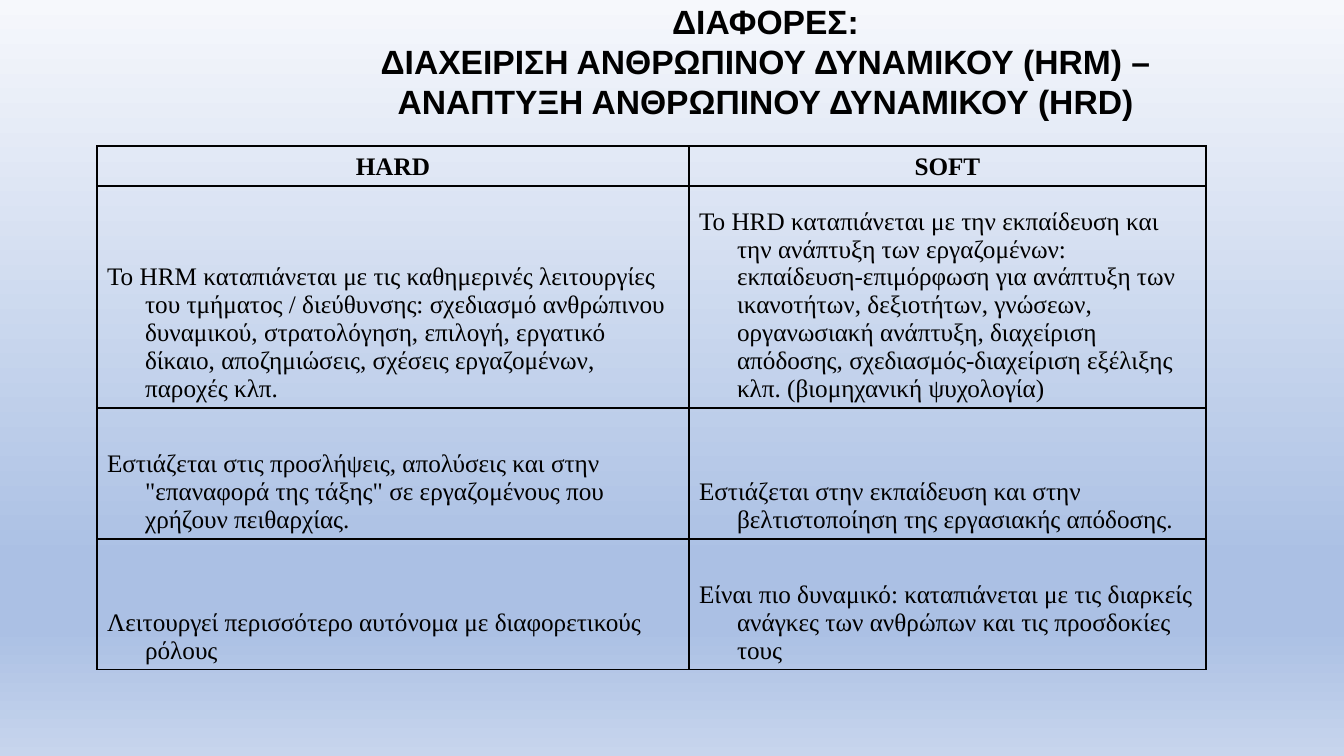
from lxml import etree
from pptx import Presentation
from pptx.dml.color import RGBColor
from pptx.enum.text import MSO_ANCHOR, PP_ALIGN
from pptx.oxml.ns import qn
from pptx.util import Pt

PX = 914400 / 100.8
BLACK = RGBColor(0x00, 0x00, 0x00)
SKY_STOPS = [
    (0, RGBColor(0xF6, 0xF8, 0xFC)),
    (74, RGBColor(0xAB, 0xC0, 0xE4)),
    (83, RGBColor(0xAB, 0xC0, 0xE4)),
    (100, RGBColor(0xC7, 0xD5, 0xED)),
]
CENTER, LEFT = PP_ALIGN.CENTER, PP_ALIGN.LEFT
MIDDLE, BOTTOM = MSO_ANCHOR.MIDDLE, MSO_ANCHOR.BOTTOM

TITLE = [
    "ΔΙΑΦΟΡΕΣ:",
    "ΔΙΑΧΕΙΡΙΣΗ ΑΝΘΡΩΠΙΝΟΥ ΔΥΝΑΜΙΚΟΥ (HRM) – ΑΝΑΠΤΥΞΗ ΑΝΘΡΩΠΙΝΟΥ ΔΥΝΑΜΙΚΟΥ (HRD)",
]
ROWS = [
    ("HARD", "SOFT"),
    (
        "Το HRM καταπιάνεται με τις καθημερινές λειτουργίες του τμήματος / διεύθυνσης: "
        "σχεδιασμό ανθρώπινου δυναμικού, στρατολόγηση, επιλογή, εργατικό δίκαιο, "
        "αποζημιώσεις, σχέσεις εργαζομένων, παροχές κλπ.",
        "Το HRD καταπιάνεται με την εκπαίδευση και την ανάπτυξη των εργαζομένων: "
        "εκπαίδευση-επιμόρφωση για ανάπτυξη των ικανοτήτων, δεξιοτήτων, γνώσεων, "
        "οργανωσιακή ανάπτυξη, διαχείριση απόδοσης, σχεδιασμός-διαχείριση εξέλιξης κλπ. "
        "(βιομηχανική ψυχολογία)",
    ),
    (
        "Εστιάζεται στις προσλήψεις, απολύσεις και στην \"επαναφορά της τάξης\" "
        "σε εργαζομένους που χρήζουν πειθαρχίας.",
        "Εστιάζεται στην εκπαίδευση και στην βελτιστοποίηση της εργασιακής απόδοσης.",
    ),
    (
        "Λειτουργεί περισσότερο αυτόνομα με διαφορετικούς ρόλους",
        "Είναι πιο δυναμικό: καταπιάνεται με τις διαρκείς ανάγκες των ανθρώπων "
        "και τις προσδοκίες τους",
    ),
]
COL_WIDTHS = [592, 517]
ROW_HEIGHTS = [40, 222, 131, 131]
HANG = 38


def px(n):
    return round(n * PX)


def add_run(p, text, font, size, bold):
    r = p.add_run()
    r.text = text
    r.font.name = font
    r.font.size = Pt(size)
    r.font.bold = bold
    r.font.color.rgb = BLACK


def paint_background(s):
    fill = s.background.fill
    fill.gradient()
    fill.gradient_angle = 270
    stops = s.background._cSld.find(".//" + qn("a:gsLst"))
    for stop in list(stops):
        stops.remove(stop)
    for pos, color in SKY_STOPS:
        stop = etree.SubElement(stops, qn("a:gs"), pos=str(pos * 1000))
        etree.SubElement(stop, qn("a:srgbClr"), val=str(color))


def fill_title(s, x, y, w, h):
    sp = s.shapes.title
    sp.left, sp.top, sp.width, sp.height = map(px, (x, y, w, h))
    tf = sp.text_frame
    tf.word_wrap = True
    tf.vertical_anchor = MIDDLE
    for i, line in enumerate(TITLE):
        p = tf.paragraphs[0] if i == 0 else tf.add_paragraph()
        p.alignment = CENTER
        add_run(p, line, "Arial", 24, True)


def outline_cell(cell):
    tcPr = cell._tc.get_or_add_tcPr()
    for i, side in enumerate(("a:lnL", "a:lnR", "a:lnT", "a:lnB")):
        ln = etree.Element(qn(side), w=str(Pt(1)))
        fill = etree.SubElement(ln, qn("a:solidFill"))
        etree.SubElement(fill, qn("a:srgbClr"), val=str(BLACK))
        tcPr.insert(i, ln)


def fill_cell(cell, text, header):
    cell.fill.background()
    cell.vertical_anchor = BOTTOM
    outline_cell(cell)
    p = cell.text_frame.paragraphs[0]
    p.alignment = CENTER if header else LEFT
    pPr = p._p.get_or_add_pPr()
    pPr.set("marL", str(px(HANG)))
    pPr.set("indent", str(px(-HANG)))
    add_run(p, text, "Times New Roman", 18, header)


def add_comparison(s, x, y, w, h):
    frame = s.shapes.add_table(len(ROWS), len(COL_WIDTHS), px(x), px(y), px(w), px(h))
    table = frame.table
    table.horz_banding = False
    for col, width in zip(table.columns, COL_WIDTHS):
        col.width = px(width)
    for row, height, texts in zip(table.rows, ROW_HEIGHTS, ROWS):
        row.height = px(height)
        for cell, text in zip(row.cells, texts):
            fill_cell(cell, text, texts is ROWS[0])


def main():
    prs = Presentation()
    prs.slide_width, prs.slide_height = px(1344), px(756)
    s = prs.slides.add_slide(prs.slide_layouts[5])
    paint_background(s)
    fill_title(s, 355, -5, 821, 132)
    add_comparison(s, 97, 146, sum(COL_WIDTHS), sum(ROW_HEIGHTS))
    prs.save("out.pptx")


if __name__ == "__main__":
    main()
